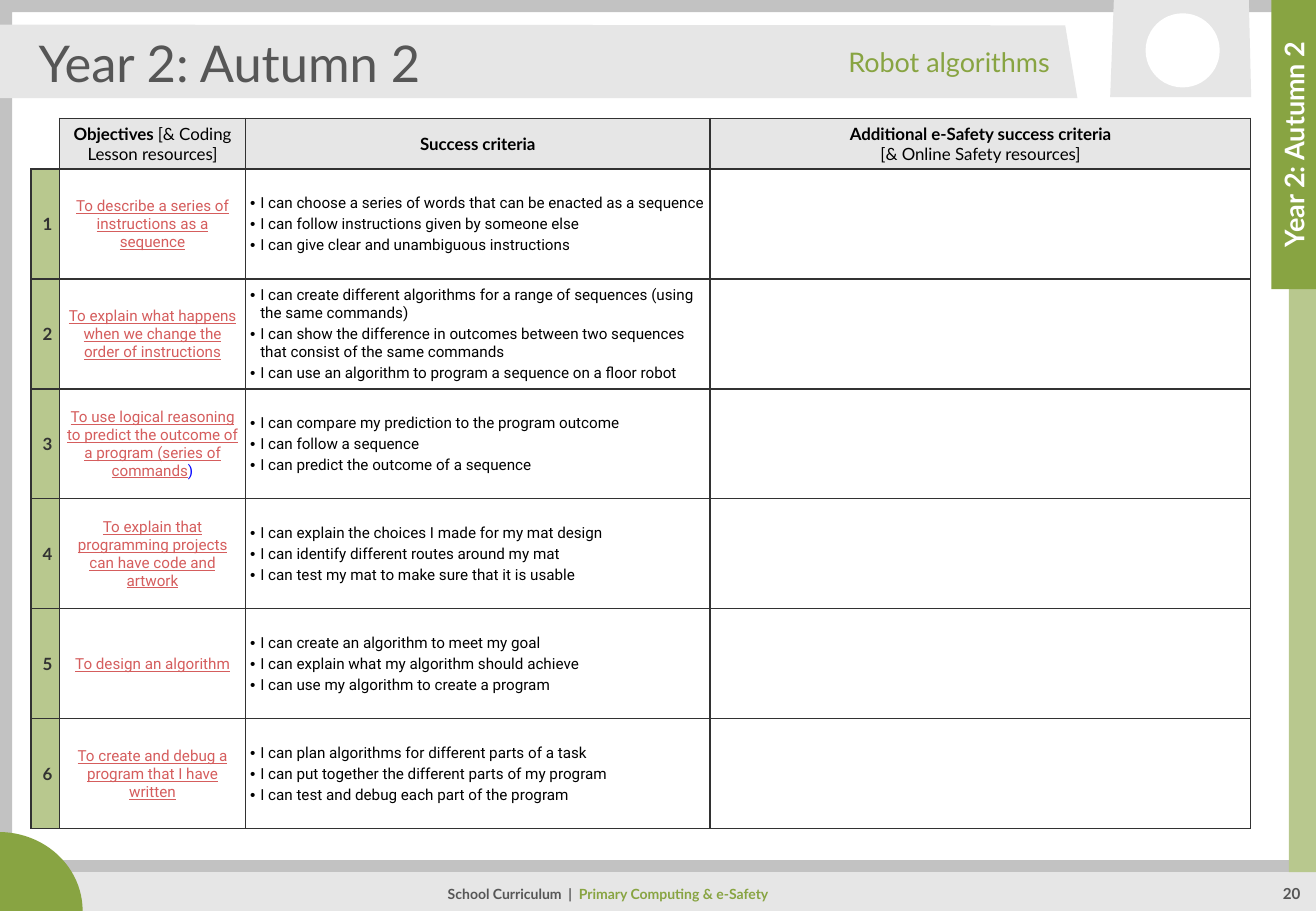
from lxml import etree
from pptx import Presentation
from pptx.dml.color import RGBColor
from pptx.enum import shapes, text
from pptx.oxml import ns
from pptx.util import Pt

GREEN, PALE_GREEN, SILVER, MIST = "88A442", "B8C88E", "C2C2C2", "E6E6E6"
SLATE, INK, LINK, WHITE, BLACK = "565656", "323232", "D55D5D", "FFFFFF", "000000"
LEFT, CENTER, RIGHT = text.PP_ALIGN.LEFT, text.PP_ALIGN.CENTER, text.PP_ALIGN.RIGHT
COLUMNS = [17, 110, 275.6, 320.4]
HEADER_HEIGHT, LESSON_HEIGHT = 29.6, 65.2
TERM = "Year 2: Autumn 2"

HEADINGS = [
    [("Objectives ", True), ("[& Coding Lesson resources]", False)],
    [("Success criteria", True)],
    [("Additional e-Safety success criteria", True), ("\n", False),
     ("[& Online Safety resources]", False)],
]
LESSONS = [
    ("To describe a series of instructions as a sequence",
     ["I can choose a series of words that can be enacted as a sequence",
      "I can follow instructions given by someone else",
      "I can give clear and unambiguous instructions"]),
    ("To explain what happens when we change the order of instructions",
     ["I can create different algorithms for a range of sequences (using the same commands)",
      "I can show the difference in outcomes between two sequences that consist of the same commands",
      "I can use an algorithm to program a sequence on a floor robot"]),
    ("To use logical reasoning to predict the outcome of a program (series of commands",
     ["I can compare my prediction to the program outcome",
      "I can follow a sequence",
      "I can predict the outcome of a sequence"]),
    ("To explain that programming projects can have code and artwork",
     ["I can explain the choices I made for my mat design",
      "I can identify different routes around my mat",
      "I can test my mat to make sure that it is usable"]),
    ("To design an algorithm",
     ["I can create an algorithm to meet my goal",
      "I can explain what my algorithm should achieve",
      "I can use my algorithm to create a program"]),
    ("To create and debug a program that I have written",
     ["I can plan algorithms for different parts of a task",
      "I can put together the different parts of my program",
      "I can test and debug each part of the program"]),
]


def color(value):
    return RGBColor.from_string(value)


def paint(shape, fill):
    shape.shadow.inherit = False
    shape.fill.solid()
    shape.fill.fore_color.rgb = color(fill)
    shape.line.fill.background()
    return shape


def add_block(page, kind, left, top, width, height, fill):
    return paint(page.shapes.add_shape(kind, Pt(left), Pt(top), Pt(width), Pt(height)), fill)


def add_outline(page, points, fill):
    corners = [(Pt(x), Pt(y)) for x, y in points]
    builder = page.shapes.build_freeform(*corners[0])
    builder.add_line_segments(corners[1:], close=True)
    return paint(builder.convert_to_shape(), fill)


def add_rule(page, left, right, y, width, stroke):
    rule = page.shapes.add_connector(shapes.MSO_CONNECTOR.STRAIGHT, Pt(left), Pt(y), Pt(right), Pt(y))
    rule.line.color.rgb = color(stroke)
    rule.line.width = Pt(width)
    etree.SubElement(rule._element.spPr, ns.qn("a:effectLst"))


def style(font, name, size, ink, bold=False):
    font.name, font.size, font.bold = name, Pt(size), bold
    font.color.rgb = color(ink)


def add_label(page, left, top, width, height, spans, size, align, bold=False, inset=7.2):
    box = page.shapes.add_textbox(Pt(left), Pt(top), Pt(width), Pt(height))
    frame = box.text_frame
    frame.word_wrap = True
    frame.vertical_anchor = text.MSO_ANCHOR.MIDDLE
    frame.margin_left = frame.margin_right = Pt(inset)
    frame.margin_top = frame.margin_bottom = 0
    para = frame.paragraphs[0]
    para.alignment = align
    style(para.font, "Lato", size, spans[0][1], bold)
    for words, ink in spans:
        span = para.add_run()
        span.text = words
        style(span.font, "Lato", size, ink, bold)
    return box


def format_cell(cell, fill, margins, hidden_sides=""):
    properties = cell._tc.get_or_add_tcPr()
    for side in "LRTB":
        edge = etree.SubElement(properties, ns.qn(f"a:ln{side}"), w=str(Pt(1)))
        if side in hidden_sides:
            etree.SubElement(edge, ns.qn("a:noFill"))
        else:
            solid = etree.SubElement(edge, ns.qn("a:solidFill"))
            etree.SubElement(solid, ns.qn("a:srgbClr"), val=INK)
    if fill:
        cell.fill.solid()
        cell.fill.fore_color.rgb = color(fill)
    else:
        cell.fill.background()
    cell.vertical_anchor = text.MSO_ANCHOR.MIDDLE
    cell.margin_left, cell.margin_top, cell.margin_right, cell.margin_bottom = map(Pt, margins)


def fill_heading(cell, spans):
    format_cell(cell, MIST, (2.9, 2.9, 2.9, 2.9))
    para = cell.text_frame.paragraphs[0]
    para.alignment = CENTER
    for words, bold in spans:
        if words == "\n":
            para.add_line_break()
        else:
            span = para.add_run()
            span.text = words
            style(span.font, "Lato", 10, BLACK, bold)


def fill_number(cell, number):
    format_cell(cell, PALE_GREEN, (2.4, 3.6, 0, 3.6))
    para = cell.text_frame.paragraphs[0]
    para.text = str(number)
    para.alignment = CENTER
    style(para.font, "Lato", 10, INK, True)


def fill_objective(cell, objective):
    format_cell(cell, WHITE, (2.9, 0.7, 2.9, 0))
    para = cell.text_frame.paragraphs[0]
    para.alignment = CENTER
    para.space_after = Pt(2)
    span = para.add_run()
    span.text = objective
    style(span.font, "Roboto", 9, LINK)
    span.font.underline = True
    if "(" in objective:
        bracket = para.add_run()
        bracket.text = ")"
        style(bracket.font, "Roboto", 9, "0000FF")


def fill_criteria(cell, criteria):
    format_cell(cell, WHITE, (2.9, 0.7, 2.9, 0))
    frame = cell.text_frame
    for index, criterion in enumerate(criteria):
        para = frame.add_paragraph() if index else frame.paragraphs[0]
        para.text = criterion
        para.alignment = LEFT
        para.space_after = Pt(2)
        properties = para._p.get_or_add_pPr()
        properties.set("marL", str(Pt(6)))
        properties.set("indent", str(Pt(-6)))
        etree.SubElement(properties, ns.qn("a:buFont"), typeface="Arial")
        etree.SubElement(properties, ns.qn("a:buChar"), char="•")
        style(para.font, "Roboto", 9, BLACK)


def add_lessons(page):
    height = HEADER_HEIGHT + LESSON_HEIGHT * len(LESSONS)
    table = page.shapes.add_table(len(LESSONS) + 1, len(COLUMNS), Pt(18.4), Pt(70.2),
                                  Pt(sum(COLUMNS)), Pt(height)).table
    table.first_row = table.horz_banding = False
    for column, width in zip(table.columns, COLUMNS):
        column.width = Pt(width)
    for index, row in enumerate(table.rows):
        row.height = Pt(LESSON_HEIGHT if index else HEADER_HEIGHT)
    format_cell(table.cell(0, 0), None, (0, 0, 0, 0), "LT")
    for column, spans in enumerate(HEADINGS, 1):
        fill_heading(table.cell(0, column), spans)
    for number, (objective, criteria) in enumerate(LESSONS, 1):
        fill_number(table.cell(number, 0), number)
        fill_objective(table.cell(number, 1), objective)
        fill_criteria(table.cell(number, 2), criteria)
        format_cell(table.cell(number, 3), WHITE, (2.9, 0.7, 2.9, 0))


def add_scenery(page):
    kinds = shapes.MSO_SHAPE
    border = add_block(page, kinds.FRAME, 0, 0, 780, 540, SILVER)
    border.adjustments[0] = 7.2 / 540
    add_block(page, kinds.RECTANGLE, 23, 517, 757, 23, MIST)
    add_rule(page, 3.6, 780, 513.4, 7, SILVER)
    add_block(page, kinds.ARC, -50.4, 493.2, 99.4, 93.6, GREEN)
    add_outline(page, [(0, 14.6), (631.4, 15), (638.6, 58.1), (0, 58.1)], MIST)
    add_block(page, kinds.RECTANGLE, 764, 0, 16, 517, PALE_GREEN)
    add_block(page, kinds.RECTANGLE, 753.6, 0, 26.4, 171.4, GREEN)
    add_outline(page, [(658, 57.6), (741.6, 57.6), (740.2, 0), (660.2, 0)], MIST)
    add_block(page, kinds.OVAL, 679, 7.9, 43.9, 43.9, WHITE)


def main():
    deck = Presentation()
    deck.slide_width, deck.slide_height = Pt(780), Pt(540)
    page = deck.slides.add_slide(deck.slide_layouts[6])
    add_scenery(page)
    add_label(page, 147.6, 519.1, 425.5, 21,
              [("School Curriculum  |  ", SLATE), ("Primary Computing & e-Safety", GREEN)],
              8.3, CENTER, True)
    add_label(page, 751, 519.7, 29, 20, [("20", SLATE)], 9, CENTER, True, 0)
    add_label(page, 15.8, 18.7, 606, 36, [(TERM, SLATE)], 30, LEFT)
    tab = add_label(page, 681.1, 73.4, 171.4, 24.5, [(TERM, WHITE)], 16, CENTER, True)
    tab.rotation = 270
    add_label(page, 268.6, 18.7, 360.7, 36, [("Robot algorithms", GREEN)], 16, RIGHT)
    add_lessons(page)
    deck.save("out.pptx")


if __name__ == "__main__":
    main()
